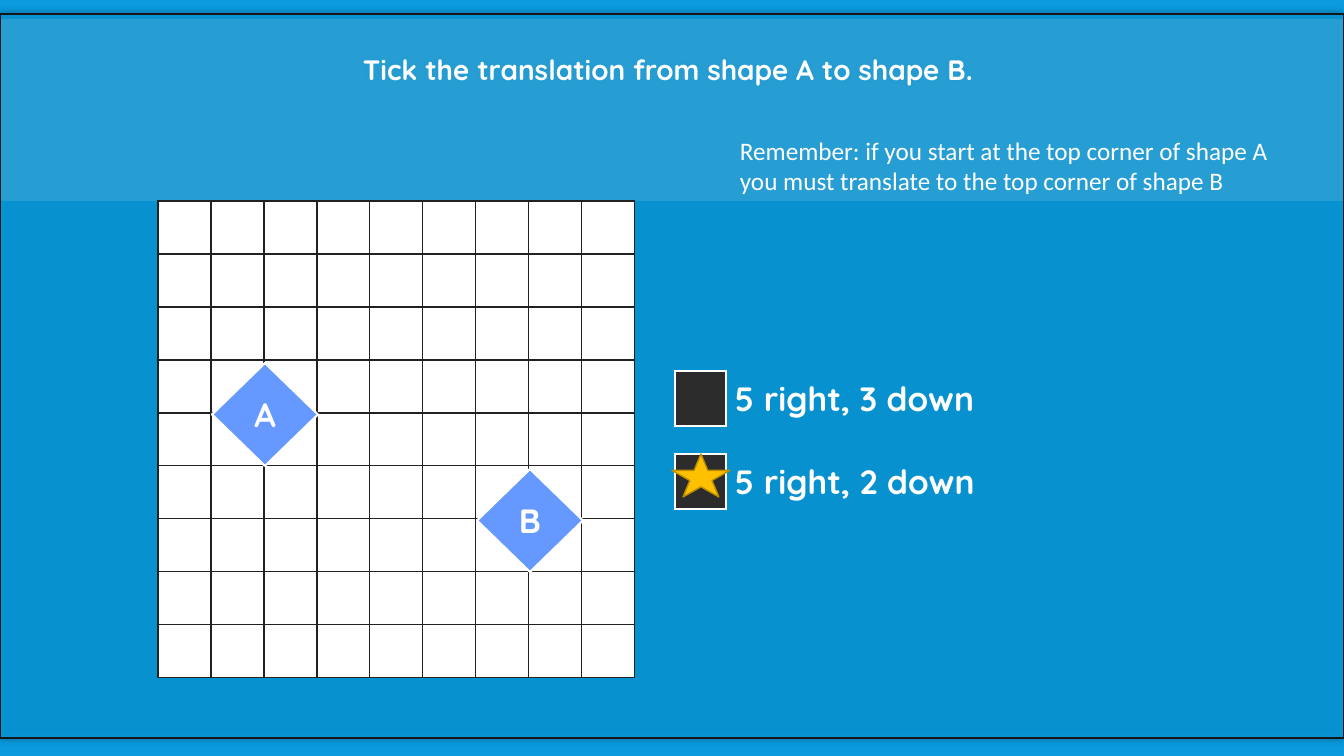
from dataclasses import dataclass

from lxml import etree
from pptx import Presentation
from pptx.dml.color import RGBColor
from pptx.enum.shapes import MSO_SHAPE
from pptx.enum.text import MSO_ANCHOR, PP_ALIGN
from pptx.oxml.ns import qn
from pptx.shapes.autoshape import Shape
from pptx.slide import Slide
from pptx.table import Table, _Cell
from pptx.text.text import TextFrame
from pptx.util import Emu, Pt

RECTANGLE, DIAMOND, STAR = MSO_SHAPE.RECTANGLE, MSO_SHAPE.DIAMOND, MSO_SHAPE.STAR_5_POINT
TOP, MIDDLE = MSO_ANCHOR.TOP, MSO_ANCHOR.MIDDLE
LEFT, CENTER = PP_ALIGN.LEFT, PP_ALIGN.CENTER

BLUE = RGBColor(0x09, 0x9B, 0xDD)
WHITE = RGBColor(0xFF, 0xFF, 0xFF)
PANEL_EDGE = RGBColor(0x16, 0x16, 0x16)
GRID_LINE = RGBColor(0x21, 0x21, 0x21)
DIAMOND_BLUE = RGBColor(0x66, 0x99, 0xFF)
BOX_GREY = RGBColor(0x2C, 0x2C, 0x2C)
GOLD = RGBColor(0xFF, 0xC0, 0x00)
DARK_GOLD = RGBColor(0xBD, 0x8E, 0x00)

SLIDE_WIDTH, SLIDE_HEIGHT = 1344, 756
EMU_PER_PX = 12192000 / SLIDE_WIDTH
GRID_LEFT, GRID_TOP, CELL, GRID_COUNT = 158, 201, 53, 9
PLAIN_TABLE_STYLE = "{2D5ABB26-0587-4C30-8999-92F81FD0307C}"

TITLE_FONT = {"name": "Quicksand", "size": Pt(20), "bold": True}
LABEL_FONT = {**TITLE_FONT, "size": Pt(24)}
HINT_FONT = {"name": "Calibri", "size": Pt(18)}


@dataclass(frozen=True)
class GridShape:
    """A diamond centred on the grid crossing at column, row."""
    letter: str
    column: int
    row: int


GRID_SHAPES = [GridShape("A", 2, 4), GridShape("B", 7, 6)]
ANSWERS = ["5 right, 3 down", "5 right, 2 down"]


def px(length: int) -> Emu:
    return Emu(round(length * EMU_PER_PX))


def write(frame: TextFrame, text: str, font: dict, alignment: PP_ALIGN) -> None:
    paragraph = frame.paragraphs[0]
    paragraph.alignment = alignment
    run = paragraph.add_run()
    run.text = text
    for attribute, value in font.items():
        setattr(run.font, attribute, value)
    run.font.color.rgb = WHITE


def add_figure(slide: Slide, preset: MSO_SHAPE, box: tuple[int, int, int, int],
               fill: RGBColor, line: RGBColor | None = None, width: float = 1) -> Shape:
    figure = slide.shapes.add_shape(preset, *map(px, box))
    figure.shadow.inherit = False
    figure.fill.solid()
    figure.fill.fore_color.rgb = fill
    if line is None:
        figure.line.fill.background()
    else:
        figure.line.color.rgb = line
        figure.line.width = Pt(width)
    return figure


def add_alpha(color: etree._Element, percent: int) -> None:
    etree.SubElement(color, qn("a:alpha"), val=str(percent * 1000))


def add_glow_shadow(figure: Shape) -> None:
    """Put an even, soft black shadow around the figure."""
    effects = figure._element.spPr.find(qn("a:effectLst"))
    shadow = etree.SubElement(effects, qn("a:outerShdw"), blurRad=str(Pt(5)), dist="0", dir="0")
    add_alpha(etree.SubElement(shadow, qn("a:srgbClr"), val="000000"), 40)


def add_plain_table(slide: Slide, left: int, top: int,
                    widths: list[int], heights: list[int]) -> Table:
    """Add a table without style, with cells free of fill and margins."""
    frame = slide.shapes.add_table(len(heights), len(widths), px(left), px(top),
                                   px(sum(widths)), px(sum(heights)))
    table = frame.table
    table.first_row = table.horz_banding = False
    table._tbl.tblPr.find(qn("a:tableStyleId")).text = PLAIN_TABLE_STYLE
    for column, width in zip(table.columns, widths):
        column.width = px(width)
    for row, height in zip(table.rows, heights):
        row.height = px(height)
    for cell in table.iter_cells():
        cell.margin_left = cell.margin_right = cell.margin_top = cell.margin_bottom = 0
        cell.vertical_anchor = MIDDLE
        cell.fill.background()
        paragraph = cell.text_frame.paragraphs[0]._p
        etree.SubElement(paragraph, qn("a:endParaRPr"), sz="1000")
    return table


def fill_cell(cell: _Cell, color: RGBColor) -> None:
    cell.fill.solid()
    cell.fill.fore_color.rgb = color


def set_borders(cell: _Cell, color: RGBColor, edges: str = "LRTB") -> None:
    properties = cell._tc.get_or_add_tcPr()
    for position, edge in enumerate(edges):
        line = etree.Element(qn(f"a:ln{edge}"), w=str(Pt(1)))
        solid = etree.SubElement(line, qn("a:solidFill"))
        etree.SubElement(solid, qn("a:srgbClr"), val=str(color))
        properties.insert(position, line)


def add_heading(slide: Slide) -> None:
    add_figure(slide, RECTANGLE, (0, 19, SLIDE_WIDTH, 182), WHITE)
    panel = add_figure(slide, RECTANGLE, (0, 14, SLIDE_WIDTH, 724), BLUE, PANEL_EDGE)
    add_alpha(panel.fill._xPr.find(qn("a:solidFill"))[0], 82)
    add_glow_shadow(panel)
    frame = panel.text_frame
    frame.vertical_anchor = TOP
    frame.margin_top = px(39)
    write(frame, "Tick the translation from shape A to shape B. ", TITLE_FONT, CENTER)


def add_grid(slide: Slide) -> None:
    sizes = [CELL] * GRID_COUNT
    grid = add_plain_table(slide, GRID_LEFT, GRID_TOP, sizes, sizes)
    for cell in grid.iter_cells():
        fill_cell(cell, WHITE)
        set_borders(cell, GRID_LINE)
    for item in GRID_SHAPES:
        left = GRID_LEFT + CELL * (item.column - 1) + 1
        top = GRID_TOP + CELL * (item.row - 1) + 3
        diamond = add_figure(slide, DIAMOND, (left, top, 2 * CELL, 103),
                             DIAMOND_BLUE, WHITE, 1.5)
        diamond.text_frame.vertical_anchor = MIDDLE
        write(diamond.text_frame, item.letter, LABEL_FONT, CENTER)


def add_answers(slide: Slide) -> None:
    options = add_plain_table(slide, 675, 371, [51, 267], [55, 28, 55])
    for index, answer in enumerate(ANSWERS):
        tick_box, label = options.rows[2 * index].cells
        fill_cell(tick_box, BOX_GREY)
        set_borders(tick_box, WHITE)
        set_borders(label, WHITE, "L")
        label.margin_left = px(9)
        write(label.text_frame, answer, LABEL_FONT, LEFT)
    set_borders(options.cell(1, 0), WHITE, "TB")
    add_figure(slide, STAR, (672, 454, 58, 43), GOLD, DARK_GOLD)


def add_hint(slide: Slide) -> None:
    hint = slide.shapes.add_textbox(*map(px, (730, 130, 568, 71))).text_frame
    hint.word_wrap = True
    write(hint, "Remember: if you start at the top corner of shape A "
                "you must translate to the top corner of shape B", HINT_FONT, LEFT)


def main() -> None:
    presentation = Presentation()
    presentation.slide_width, presentation.slide_height = px(SLIDE_WIDTH), px(SLIDE_HEIGHT)
    slide = presentation.slides.add_slide(presentation.slide_layouts[6])
    slide.background.fill.solid()
    slide.background.fill.fore_color.rgb = BLUE
    add_heading(slide)
    add_grid(slide)
    add_answers(slide)
    add_hint(slide)
    presentation.save("out.pptx")


if __name__ == "__main__":
    main()
